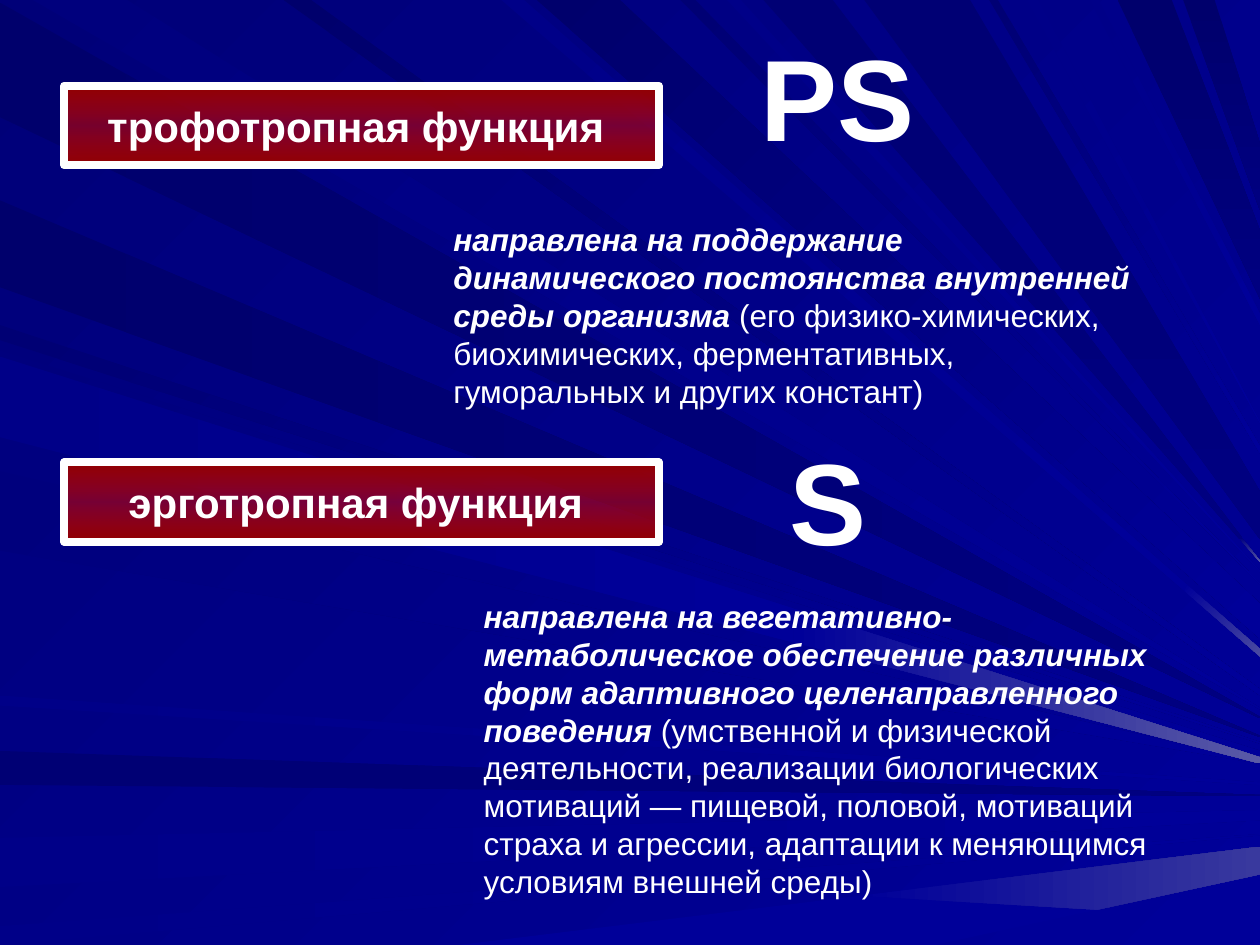
import copy
from dataclasses import dataclass
from typing import NamedTuple

import pptx
import pptx.dml.color
import pptx.enum.shapes
import pptx.enum.text
import pptx.util


@dataclass(frozen=True)
class Theme:
    font: str = "Arial"
    text: str = "FFFFFF"
    background: tuple = ("000078", "000099")
    box_edge: str = "920000"
    box_middle: str = "CC0000"
    box_middle_opacity: int = 58
    box_line: float = 4.5
    heading_size: int = 24
    body_size: int = 18
    symbol_size: int = 66
    # Ray shades at the slide edge, from dark to bright
    dark: str = "00006C"
    dim: str = "000074"
    mid: str = "00007D"
    soft: str = "000088"
    bright: str = "000099"


class Blend(NamedTuple):
    """Colour a ray fades to, and the clockwise angle of the fade."""
    end: str
    angle: int


class Ray(NamedTuple):
    """Beam from a span of one slide edge to a point on the right edge."""
    edge: str
    near_start: int
    near_end: int
    tip: int
    shade: str
    blend: Blend
    spread: int = 1
    glow: str = ""
    glow_from: float = 1


class Function(NamedTuple):
    """One division: heading box, large symbol and description (points)."""
    heading: str
    heading_top: float
    symbol: str
    symbol_box: tuple
    emphasis: str
    details: str
    description_box: tuple


THEME = Theme()
RAY_UNIT = pptx.util.Pt(0.72)  # the slide is 1000 by 750 ray units
RAY_WIDTH, RAY_HEIGHT = 1000, 750
HEADING_LEFT, HEADING_WIDTH, HEADING_HEIGHT = 36.7, 339.8, 45.4

ACROSS_DEEP = Blend("000080", 0)
ACROSS = Blend("000099", 0)
DIAGONAL = Blend("000099", 45)
DOWN = Blend("000080", 90)

RAYS = [
    Ray("left", 2, 93, 569, THEME.dark, ACROSS_DEEP),
    Ray("top", 26, 101, 562, THEME.mid, DIAGONAL),
    Ray("left", 596, 623, 631, THEME.dim, ACROSS_DEEP),
    Ray("left", 665, 704, 643, THEME.soft, ACROSS, 8),
    Ray("left", 735, 750, 662, THEME.soft, ACROSS),
    Ray("bottom", 364, 742, 672, THEME.bright, ACROSS, 22, "39399E", 0.5),
    Ray("left", 258, 270, 589, THEME.dim, DIAGONAL),
    Ray("left", 159, 228, 584, THEME.dark, ACROSS_DEEP),
    Ray("top", 398, 416, 515, THEME.soft, DIAGONAL, 6, "4A4AA1", 0.9),
    Ray("top", 426, 492, 479, THEME.dark, DIAGONAL, 28),
    Ray("top", 540, 552, 463, THEME.dim, DIAGONAL),
    Ray("top", 606, 661, 445, THEME.dim, DOWN, 1, "5A5AA6", 0.96),
    Ray("top", 887, 930, 183, THEME.dark, DOWN, 54),
    Ray("top", 939, 964, 114, THEME.dark, DOWN, 53),
    Ray("left", 278, 342, 596, THEME.mid, DIAGONAL, 6),
    Ray("left", 374, 437, 605, THEME.mid, DIAGONAL),
    Ray("left", 552, 560, 621, THEME.soft, ACROSS, 2),
    Ray("top", 225, 247, 547, THEME.dark, DIAGONAL, 5),
    Ray("top", 577, 588, 453, THEME.soft, DIAGONAL),
    Ray("top", 686, 770, 390, THEME.dim, DOWN, 38),
    Ray("top", 785, 792, 354, THEME.dim, DIAGONAL, 6),
    Ray("top", 815, 824, 335, THEME.soft, DIAGONAL),
    Ray("top", 865, 872, 249, THEME.soft, DIAGONAL, 9),
    Ray("left", 283, 347, 601, THEME.soft, ACROSS, 5, "5A5AA6", 0.63),
]

FUNCTIONS = [
    Function(
        "трофотропная функция ", 49, "PS", (427.7, 11.5, 103.7, 87.1),
        "направлена на поддержание динамического постоянства внутренней среды организма",
        " (его физико-химических, биохимических, ферментативных, гуморальных и других констант)",
        (252, 122.4, 402.5, 115.2)),
    Function(
        "эрготропная функция ", 264.2, "S", (444.2, 241.9, 59, 87.1),
        "направлена на вегетативно-метаболическое обеспечение различных форм "
        "адаптивного целенаправленного поведения",
        " (умственной и физической деятельности, реализации биологических мотиваций — пищевой, "
        "половой, мотиваций страха и агрессии, адаптации к меняющимся условиям внешней среды)",
        (269.3, 337.7, 425.5, 180)),
]


def rgb(value: str):
    return pptx.dml.color.RGBColor.from_string(value)


def fill_gradient(fill, start: str, end: str, angle: int) -> None:
    fill.gradient()
    fill.gradient_angle = -angle % 360  # the library counts counter-clockwise
    for stop, colour in zip(fill.gradient_stops, (start, end)):
        stop.color.rgb = rgb(colour)


def add_run(paragraph, text: str, size: int, bold=True, italic=False) -> None:
    run = paragraph.add_run()
    run.text = text
    run.font.name = THEME.font
    run.font.size = pptx.util.Pt(size)
    run.font.bold, run.font.italic = bold, italic
    run.font.color.rgb = rgb(THEME.text)


def edge_point(edge: str, distance: int) -> tuple:
    if edge == "left":
        return 0, distance
    return distance, 0 if edge == "top" else RAY_HEIGHT


def draw_beam(slide, outline: list, start: str, end: str, angle: int) -> None:
    builder = slide.shapes.build_freeform(*outline[0], scale=RAY_UNIT)
    builder.add_line_segments(outline[1:], close=True)
    beam = builder.convert_to_shape()
    beam.shadow.inherit = False
    beam.line.fill.background()
    fill_gradient(beam.fill, start, end, angle)


def draw_ray(slide, ray: Ray) -> None:
    near = [edge_point(ray.edge, ray.near_start), edge_point(ray.edge, ray.near_end)]
    upper, lower = (RAY_WIDTH, ray.tip), (RAY_WIDTH, ray.tip + ray.spread)
    # Sides must not cross: a top edge runs towards the upper end of the tip
    far = [lower, upper] if ray.edge == "top" else [upper, lower]
    split = [tuple(a + (b - a) * ray.glow_from for a, b in zip(start, end))
             for start, end in zip(near, far)]
    draw_beam(slide, near + split[::-1], ray.shade, *ray.blend)
    if ray.glow:
        draw_beam(slide, split + far[::-1], ray.blend.end, ray.glow, ray.blend.angle)


def draw_heading(slide, text: str, top: float) -> None:
    heading = slide.shapes.add_shape(
        pptx.enum.shapes.MSO_SHAPE.RECTANGLE,
        *map(pptx.util.Pt, (HEADING_LEFT, top, HEADING_WIDTH, HEADING_HEIGHT)))
    heading.shadow.inherit = False
    heading.line.color.rgb = rgb(THEME.text)
    heading.line.width = pptx.util.Pt(THEME.box_line)
    fill_gradient(heading.fill, THEME.box_edge, THEME.box_edge, 90)

    # Translucent middle stop between the two edge stops
    first_stop = heading._element.spPr.find(".//" + pptx.oxml.ns.qn("a:gs"))
    middle_stop = copy.deepcopy(first_stop)
    middle_stop.set("pos", "50000")
    middle_stop[0].set("val", THEME.box_middle)
    alpha = pptx.oxml.xmlchemy.OxmlElement("a:alpha")
    alpha.set("val", str(THEME.box_middle_opacity * 1000))
    middle_stop[0].append(alpha)
    first_stop.addnext(middle_stop)

    frame = heading.text_frame
    frame.word_wrap = False
    frame.vertical_anchor = pptx.enum.text.MSO_ANCHOR.MIDDLE
    frame.paragraphs[0].alignment = pptx.enum.text.PP_ALIGN.CENTER
    add_run(frame.paragraphs[0], text, THEME.heading_size)


def add_text(slide, box: tuple, wrap: bool):
    frame = slide.shapes.add_textbox(*map(pptx.util.Pt, box)).text_frame
    frame.word_wrap = wrap
    frame.auto_size = pptx.enum.text.MSO_AUTO_SIZE.SHAPE_TO_FIT_TEXT
    return frame.paragraphs[0]


def draw_function(slide, function: Function) -> None:
    draw_heading(slide, function.heading, function.heading_top)
    description = add_text(slide, function.description_box, wrap=True)
    add_run(description, function.emphasis, THEME.body_size, italic=True)
    add_run(description, function.details, THEME.body_size, bold=False)
    symbol = add_text(slide, function.symbol_box, wrap=False)
    add_run(symbol, function.symbol, THEME.symbol_size)


def main() -> None:
    deck = pptx.Presentation()
    deck.slide_width, deck.slide_height = pptx.util.Pt(720), pptx.util.Pt(540)
    slide = deck.slides.add_slide(deck.slide_layouts[6])
    # Background with light rays, then the two functions
    fill_gradient(slide.background.fill, *THEME.background, 45)
    for ray in RAYS:
        draw_ray(slide, ray)
    for function in FUNCTIONS:
        draw_function(slide, function)
    deck.save("out.pptx")


if __name__ == "__main__":
    main()
